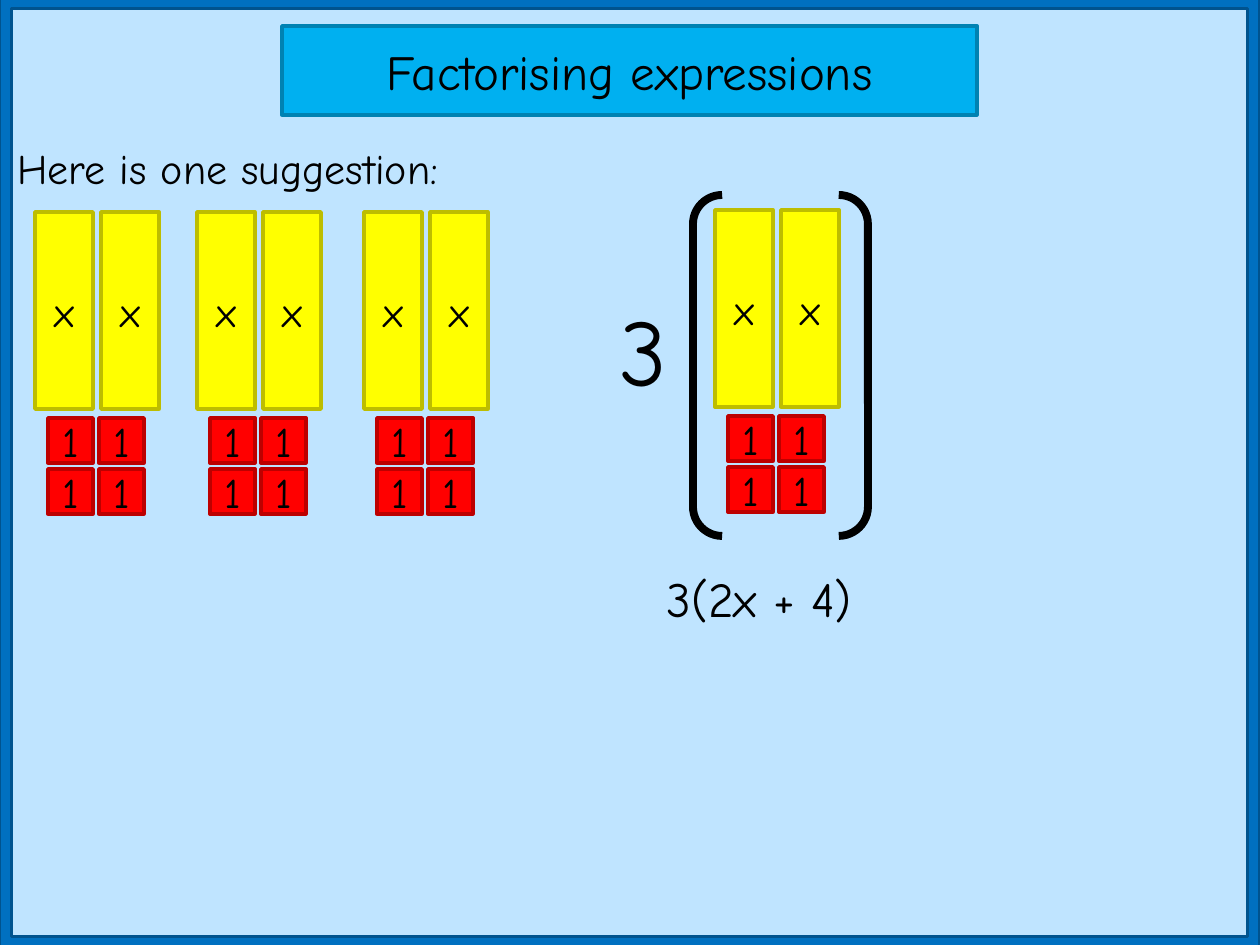
from dataclasses import dataclass

from pptx import Presentation
from pptx.dml.color import RGBColor
from pptx.enum.shapes import MSO_SHAPE
from pptx.enum.text import MSO_ANCHOR, MSO_AUTO_SIZE, PP_ALIGN
from pptx.util import Pt

EMU_PER_PX = 914400 / 126
FONT = "Comic Neue"
BLACK = "000000"


@dataclass(frozen=True)
class Area:
    left: int
    top: int
    width: int
    height: int

    def emu(self) -> list[int]:
        return [round(length * EMU_PER_PX)
                for length in (self.left, self.top, self.width, self.height)]


@dataclass(frozen=True)
class Style:
    fill: str | None
    line: str
    line_width: float = 2


@dataclass(frozen=True)
class TileKind:
    """A kind of algebra tile and its grid inside a tile set."""
    label: str
    style: Style
    first: Area
    step: int
    columns: int
    rows: int


@dataclass(frozen=True)
class Caption:
    text: str
    area: Area
    size: int


TILE_KINDS = [
    TileKind("x", Style("FFFF00", "BDBD00"), Area(0, 0, 58, 197), 66, 2, 1),
    TileKind("1", Style("FF0000", "BD0000"), Area(13, 206, 45, 45), 51, 2, 2),
]
TERM_SETS = [(35, 212), (197, 212), (364, 212)]
FACTOR_SET = (715, 210)
CAPTIONS = [
    Caption("Here is one suggestion:", Area(5, 136, 1240, 63), 24),
    Caption("3(2x + 4)", Area(654, 562, 244, 72), 28),
    Caption("3", Area(607, 286, 101, 127), 54),
]


def color(code: str) -> RGBColor:
    return RGBColor.from_string(code)


def write(shape, text: str, size: int) -> None:
    shape.text_frame.text = text
    font = shape.text_frame.paragraphs[0].runs[0].font
    font.name = FONT
    font.size = Pt(size)
    font.color.rgb = color(BLACK)


def add_figure(shapes, preset: MSO_SHAPE, area: Area, style: Style):
    shape = shapes.add_shape(preset, *area.emu())
    shape.shadow.inherit = False
    if style.fill:
        shape.fill.solid()
        shape.fill.fore_color.rgb = color(style.fill)
    else:
        shape.fill.background()
    shape.line.color.rgb = color(style.line)
    shape.line.width = Pt(style.line_width)
    return shape


def add_label_box(shapes, text: str, area: Area, style: Style, size: int) -> None:
    box = add_figure(shapes, MSO_SHAPE.RECTANGLE, area, style)
    write(box, text, size)
    box.text_frame.vertical_anchor = MSO_ANCHOR.MIDDLE
    box.text_frame.paragraphs[0].alignment = PP_ALIGN.CENTER


def add_tile_set(shapes, left: int, top: int) -> None:
    """Draw the tiles of 2x + 4 from the given corner."""
    for kind in TILE_KINDS:
        for column in range(kind.columns):
            for row in range(kind.rows):
                area = Area(left + kind.first.left + column * kind.step,
                            top + kind.first.top + row * kind.step,
                            kind.first.width, kind.first.height)
                add_label_box(shapes, kind.label, area, kind.style, 24)


def add_caption(shapes, caption: Caption) -> None:
    box = shapes.add_textbox(*caption.area.emu())
    box.text_frame.word_wrap = True
    box.text_frame.auto_size = MSO_AUTO_SIZE.SHAPE_TO_FIT_TEXT
    write(box, caption.text, caption.size)


def main() -> None:
    deck = Presentation()
    deck.slide_width, deck.slide_height = Area(0, 0, 1260, 945).emu()[2:]
    page = deck.slides.add_slide(deck.slide_layouts[6])
    page.background.fill.solid()
    page.background.fill.fore_color.rgb = color("BFE4FF")

    border = add_figure(page.shapes, MSO_SHAPE.FRAME, Area(-1, -4, 1261, 953),
                        Style("0070C0", "00538E"))
    border.adjustments[0] = 0.013
    add_label_box(page.shapes, "Factorising expressions", Area(282, 26, 695, 89),
                  Style("00B0F0", "0082B2"), 28)

    for left, top in TERM_SETS:
        add_tile_set(page.shapes.add_group_shape().shapes, left, top)

    add_figure(page.shapes, MSO_SHAPE.DOUBLE_BRACKET, Area(693, 195, 175, 341),
               Style(None, BLACK, 4.5))
    add_tile_set(page.shapes, *FACTOR_SET)

    for caption in CAPTIONS:
        add_caption(page.shapes, caption)

    deck.save("out.pptx")


if __name__ == "__main__":
    main()
